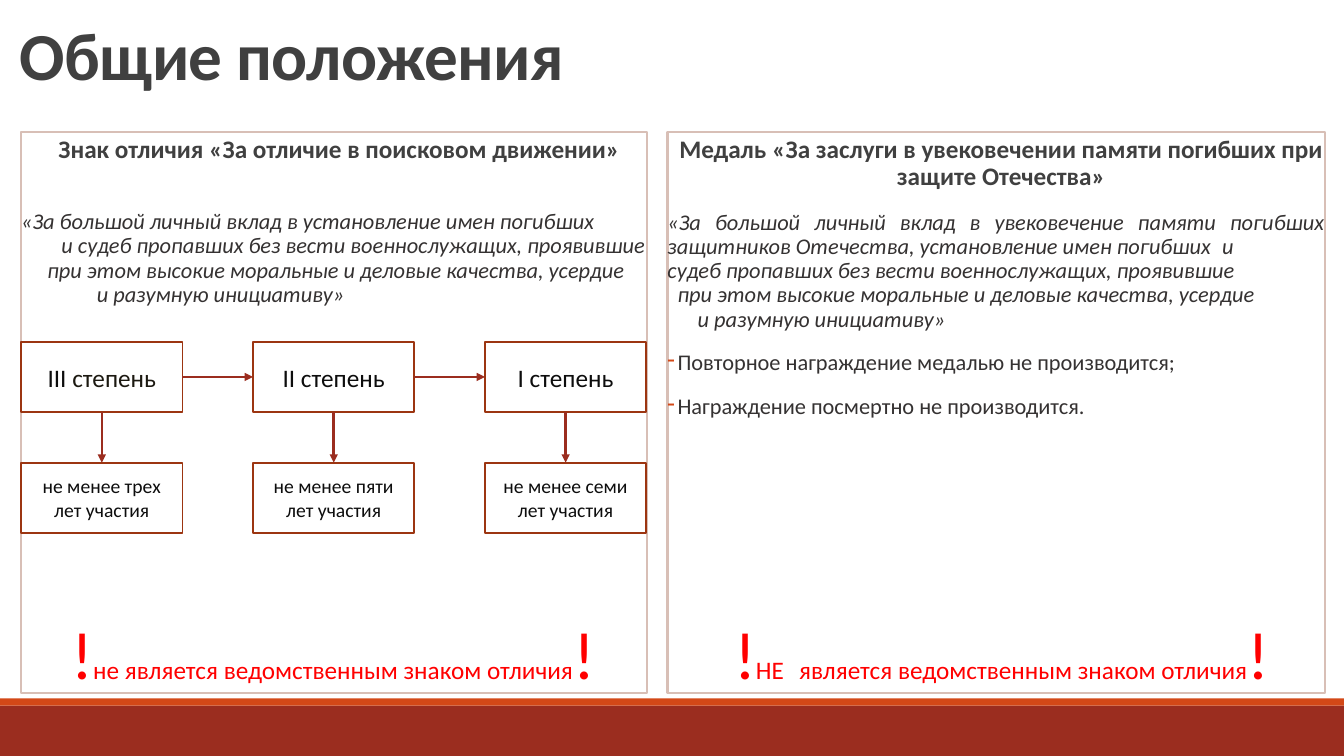
from pptx import Presentation
from pptx.dml.color import RGBColor
from pptx.enum.shapes import MSO_CONNECTOR, MSO_SHAPE
from pptx.enum.text import MSO_ANCHOR, PP_ALIGN
from pptx.oxml.ns import qn
from pptx.util import Inches, Pt
from lxml.etree import SubElement

FONT = "Calibri"
RED, ORANGE, BROWN, PALE = "9B2D1F", "D34817", "9C3511", "D8BFB6"
GREY, DARK, BLACK, DEGREE, ALERT = "404040", "353232", "0D0D0D", "1C1911", "FF0000"

TITLE = "Общие положения"
# Each panel: left, width, heading, space before the quote, quote lines with indents, bullets
PANELS = [
    (6.62, 6.52, "Медаль «За заслуги в увековечении памяти погибших при защите Отечества»", 12,
     [(0, "«За большой личный вклад в увековечение памяти погибших "
          "защитников Отечества, установление имен погибших\tи"),
      (0, "судеб пропавших без вести военнослужащих, проявившие"),
      (0.1, "при этом высокие моральные и деловые качества, усердие"),
      (0.3, "и разумную инициативу»")],
     ["Повторное награждение медалью не производится;",
      "Награждение посмертно не производится."]),
    (0.21, 6.21, "Знак отличия «За отличие в поисковом движении»", 31,
     [(0, "«За большой личный вклад в установление имен погибших"),
      (0.4, "и судеб пропавших без вести военнослужащих, проявившие"),
      (0.26, "при этом высокие моральные и деловые качества, усердие"),
      (0.75, "и разумную инициативу»")],
     []),
]
DEGREES = [
    ([("III ", 18, BLACK), ("степень", 18, DEGREE)], "не менее трех лет участия"),
    ([("II степень", 18, BLACK)], "не менее пяти лет участия"),
    ([("I степень", 18, BLACK)], "не менее семи лет участия"),
]
MARK = ("!", 48, ALERT)
WARNINGS = [
    (0.2, [MARK, ("не является ведомственным знаком отличия", 18, ALERT), MARK]),
    (6.83, [MARK, ("НЕ", 18, ALERT), (" ", 48, ALERT),
            ("является ведомственным знаком отличия", 18, ALERT), MARK]),
]
PANEL_TOP, PANEL_HEIGHT = 1.31, 5.57
BOX_LEFT, BOX_STEP, BOX_WIDTH, BOX_HEIGHT = 0.21, 2.3, 1.6, 0.7
DEGREE_TOP, YEARS_TOP = 3.39, 4.59


def color(value):
    return RGBColor.from_string(value)


def set_all(target, values):
    for name, value in values.items():
        setattr(target, name, value)


def add_rectangle(slide, box, fill=None, line=None, width=1):
    shape = slide.shapes.add_shape(MSO_SHAPE.RECTANGLE, *map(Inches, box))
    shape.shadow.inherit = False
    if fill:
        shape.fill.solid()
        shape.fill.fore_color.rgb = color(fill)
    else:
        shape.fill.background()
    if line:
        shape.line.color.rgb = color(line)
        shape.line.width = Pt(width)
    else:
        shape.line.fill.background()
    return shape


def write(paragraph, runs, align=PP_ALIGN.CENTER, spacing=None, **font):
    """Fill a paragraph with (text, size, colour) runs."""
    set_all(paragraph, {"alignment": align, **(spacing or {})})
    for text, size, run_color in runs:
        run = paragraph.add_run()
        run.text = text
        set_all(run.font, {"name": FONT, "size": Pt(size), **font})
        run.font.color.rgb = color(run_color)


def set_indent(paragraph, left, first=0):
    properties = paragraph._p.get_or_add_pPr()
    properties.set("marL", str(Inches(left)))
    properties.set("indent", str(Inches(first)))
    return properties


def add_text(slide, box, runs, anchor=MSO_ANCHOR.MIDDLE, **options):
    frame = slide.shapes.add_textbox(*map(Inches, box)).text_frame
    set_all(frame, {"word_wrap": True, "vertical_anchor": anchor})
    write(frame.paragraphs[0], runs, **options)
    return frame


def add_panel(slide, left, width, heading, quote_gap, quote, bullets):
    shape = add_rectangle(slide, (left, PANEL_TOP, width, PANEL_HEIGHT), line=PALE, width=1.5)
    frame = shape.text_frame
    set_all(frame, {"word_wrap": True, "vertical_anchor": MSO_ANCHOR.TOP,
                    "margin_left": 0, "margin_right": 0})

    def spacing(before, after):
        return {"line_spacing": 0.9, "space_before": Pt(before), "space_after": Pt(after)}

    paragraph = frame.paragraphs[0]
    write(paragraph, [(heading, 18, GREY)], spacing=spacing(0, 2), bold=True)
    set_indent(paragraph, 0.1)
    for index, (indent, text) in enumerate(quote):
        paragraph = frame.add_paragraph()
        before = 0 if index else quote_gap
        after = 2 if index == len(quote) - 1 else 0
        write(paragraph, [(text, 16, DARK)], PP_ALIGN.JUSTIFY, spacing(before, after), italic=True)
        properties = set_indent(paragraph, indent)
        if "\t" in text:
            tabs = SubElement(properties, qn("a:tabLst"))
            SubElement(tabs, qn("a:tab"), pos=str(Inches(width - 0.02)), algn="r")
    for text in bullets:
        paragraph = frame.add_paragraph()
        write(paragraph, [(text, 16, DARK)], PP_ALIGN.JUSTIFY, spacing(12, 2))
        properties = set_indent(paragraph, 0.1, -0.1)
        bullet_color = SubElement(properties, qn("a:buClr"))
        SubElement(bullet_color, qn("a:srgbClr"), val=ORANGE)
        SubElement(properties, qn("a:buChar"), char="-")


def add_box(slide, left, top, runs):
    shape = add_rectangle(slide, (left, top, BOX_WIDTH, BOX_HEIGHT), line=BROWN, width=1.25)
    set_all(shape.text_frame, {"word_wrap": True, "vertical_anchor": MSO_ANCHOR.MIDDLE})
    write(shape.text_frame.paragraphs[0], runs)
    return shape


def add_arrow(slide, start, start_side, end, end_side):
    arrow = slide.shapes.add_connector(MSO_CONNECTOR.STRAIGHT, 0, 0, 0, 0)
    arrow.begin_connect(start, start_side)
    arrow.end_connect(end, end_side)
    arrow.line.color.rgb = color(RED)
    arrow.line.width = Pt(1.75)
    SubElement(arrow.line._get_or_add_ln(), qn("a:tailEnd"), type="triangle")
    SubElement(arrow._element.spPr, qn("a:effectLst"))


def main():
    presentation = Presentation()
    presentation.slide_width, presentation.slide_height = Inches(13.33), Inches(7.5)
    slide = presentation.slides.add_slide(presentation.slide_layouts[6])

    add_rectangle(slide, (0, 7, 13.33, 0.5), fill=RED)
    add_rectangle(slide, (0, 6.93, 13.33, 0.07), fill=ORANGE)
    title = add_text(slide, (0.1, 0.11, 12.63, 0.87), [(TITLE, 48, GREY)], MSO_ANCHOR.BOTTOM,
                     align=PP_ALIGN.LEFT, spacing={"line_spacing": 0.85}, bold=True)
    title.paragraphs[0].runs[0].font._element.set("spc", "-50")

    for panel in PANELS:
        add_panel(slide, *panel)

    previous = None
    for index, (degree_runs, years) in enumerate(DEGREES):
        left = BOX_LEFT + index * BOX_STEP
        degree_box = add_box(slide, left, DEGREE_TOP, degree_runs)
        years_box = add_box(slide, left, YEARS_TOP, [(years, 14, BLACK)])
        add_arrow(slide, degree_box, 2, years_box, 0)
        if previous is not None:
            add_arrow(slide, previous, 3, degree_box, 1)
        previous = degree_box

    for left, runs in WARNINGS:
        add_text(slide, (left, 6.14, 6.21, 0.66), runs)

    presentation.save("out.pptx")


if __name__ == "__main__":
    main()
